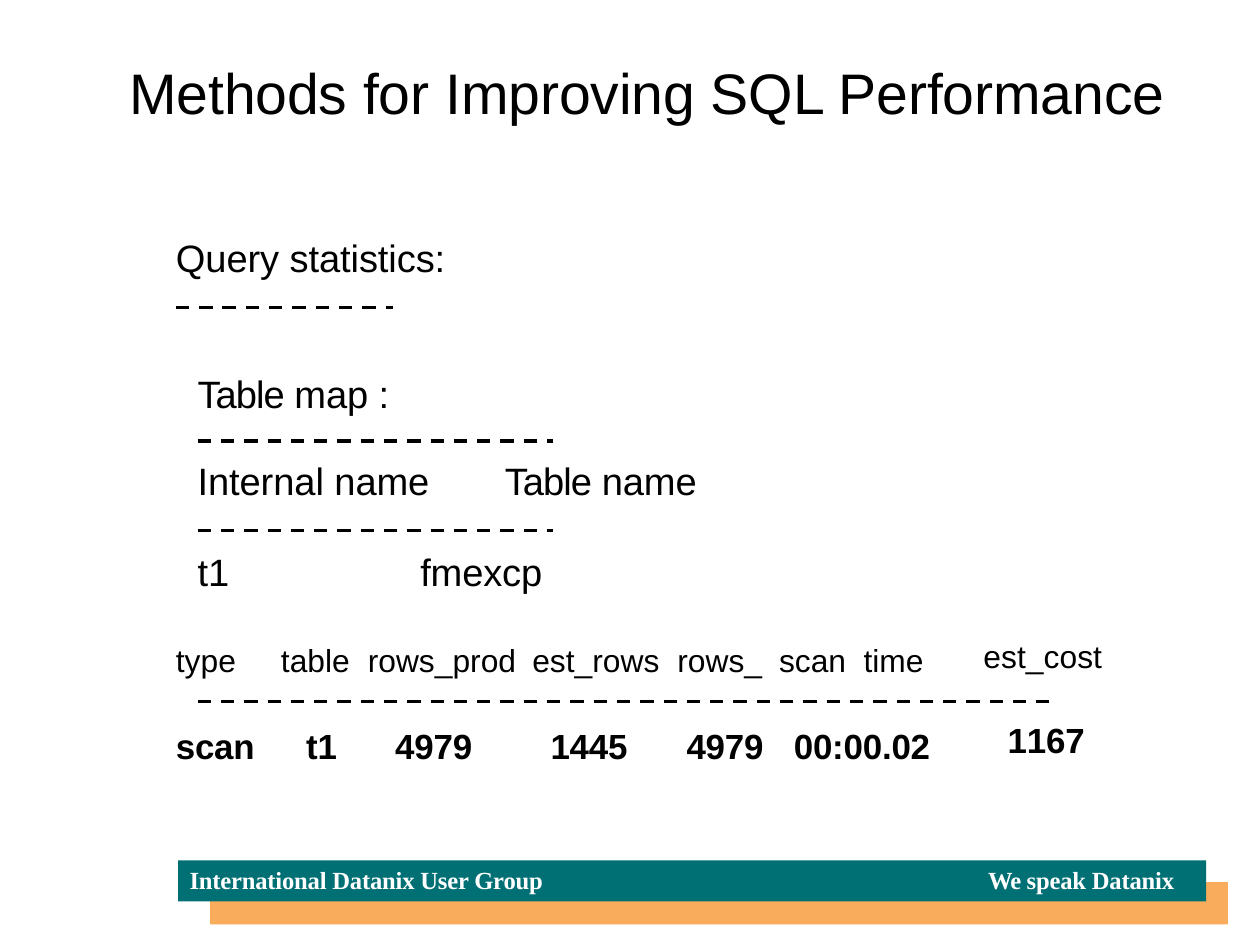
"""Build the query statistics slide on improving SQL performance."""
from pptx import Presentation
from pptx import util as u
from pptx.dml.color import RGBColor
from pptx.enum import dml, shapes, text
from pptx.oxml.ns import qn
from lxml import etree


def paint(fmt, color):
    fmt.solid()
    fmt.fore_color.rgb = RGBColor.from_string(color)


def write(sp, runs, size, bold=False, color="000000", font="Arial", tabs=()):
    tf = sp.text_frame
    tf.word_wrap = True
    tf.vertical_anchor = text.MSO_ANCHOR.TOP
    tf.margin_left = tf.margin_top = tf.margin_right = tf.margin_bottom = 0
    p = tf.paragraphs[0]
    p.alignment = text.PP_ALIGN.LEFT
    if tabs:
        stops = etree.SubElement(p._p.get_or_add_pPr(), qn("a:tabLst"))
        for pos in tabs:
            etree.SubElement(stops, qn("a:tab"), pos=str(u.Inches(pos)), algn="l")
    for words, spacing in runs:
        r = p.add_run()
        r.text = words
        r.font.size, r.font.bold, r.font.name = u.Pt(size), bold, font
        paint(r.font.fill, color)
        r._r.get_or_add_rPr().set("spc", str(spacing))


prs = Presentation()
prs.slide_width, prs.slide_height = u.Inches(11.03), u.Inches(8.27)
s = prs.slides.add_slide(prs.slide_layouts[5])

for x, y, w, h, color in [(1.84, 7.72, 8.91, 0.37, "F9AC5B"),
                          (1.56, 7.53, 9, 0.36, "007075")]:
    sp = s.shapes.add_shape(shapes.MSO_SHAPE.RECTANGLE, *map(u.Inches, (x, y, w, h)))
    sp.shadow.inherit = False
    paint(sp.fill, color)
    sp.line.fill.background()

title = s.shapes.title
title.left, title.top, title.width, title.height = map(u.Inches, (1.13, 0.5, 9.4, 0.63))
write(title, [("Methods for Improving SQL Performance", -5)], 36)

for x, y, w in [(1.54, 2.69, 1.9), (1.73, 3.86, 3.11), (1.73, 4.64, 3.11), (1.73, 6.14, 7.45)]:
    rule = s.shapes.add_connector(shapes.MSO_CONNECTOR.STRAIGHT,
                                  *map(u.Inches, (x, y, x + w, y)))
    rule.line.width = u.Pt(2.11)
    rule.line.dash_style = dml.MSO_LINE.DASH
    paint(rule.line.fill, "000000")
    etree.SubElement(rule._element.spPr, qn("a:effectLst"))

margin, indent = 1.54, 1.73
lines = [
    (margin, 2.05, 2.6, 24, False, [("Query statistics:", -5)], ()),
    (indent, 3.24, 2.2, 24, False, [("Table ", -60), ("map :", -5)], ()),
    (indent, 4, 4.8, 24, False,
     [("Internal name\t", -5), ("Table ", -60), ("name", -5)], (2.69,)),
    (indent, 4.8, 3.4, 24, False, [("t1\t", 0), ("fmexcp", -10)], (1.95,)),
    (margin, 5.61, 7, 20, False,
     [("type\ttable\trows_prod\test_rows\trows_\tscan\ttime", 0)],
     (0.92, 1.68, 3.12, 4.39, 5.28, 6.02)),
    (margin, 6.34, 7, 22, True, [("scan\tt1\t4979\t1445\t4979\t00:00.02", -10)],
     (1.14, 1.92, 3.28, 4.47, 5.41)),
    (8.61, 5.57, 1.3, 20, False, [("est_cost", 3)], ()),
    (8.82, 6.29, 0.9, 22, True, [("1", -120), ("167", -10)], ()),
]
for x, y, w, size, bold, runs, tabs in lines:
    sp = s.shapes.add_textbox(*map(u.Inches, (x, y, w, size / 60)))
    write(sp, runs, size, bold, tabs=tabs)

for x, w, runs in [(1.66, 3.6, [("International Datanix User Group", -10)]),
                   (8.65, 1.9, [("We ", -50), ("speak Datanix", -10)])]:
    sp = s.shapes.add_textbox(*map(u.Inches, (x, 7.57, w, 0.27)))
    write(sp, runs, 15.5, True, "FFFFFF", "Times New Roman")

prs.save("out.pptx")
